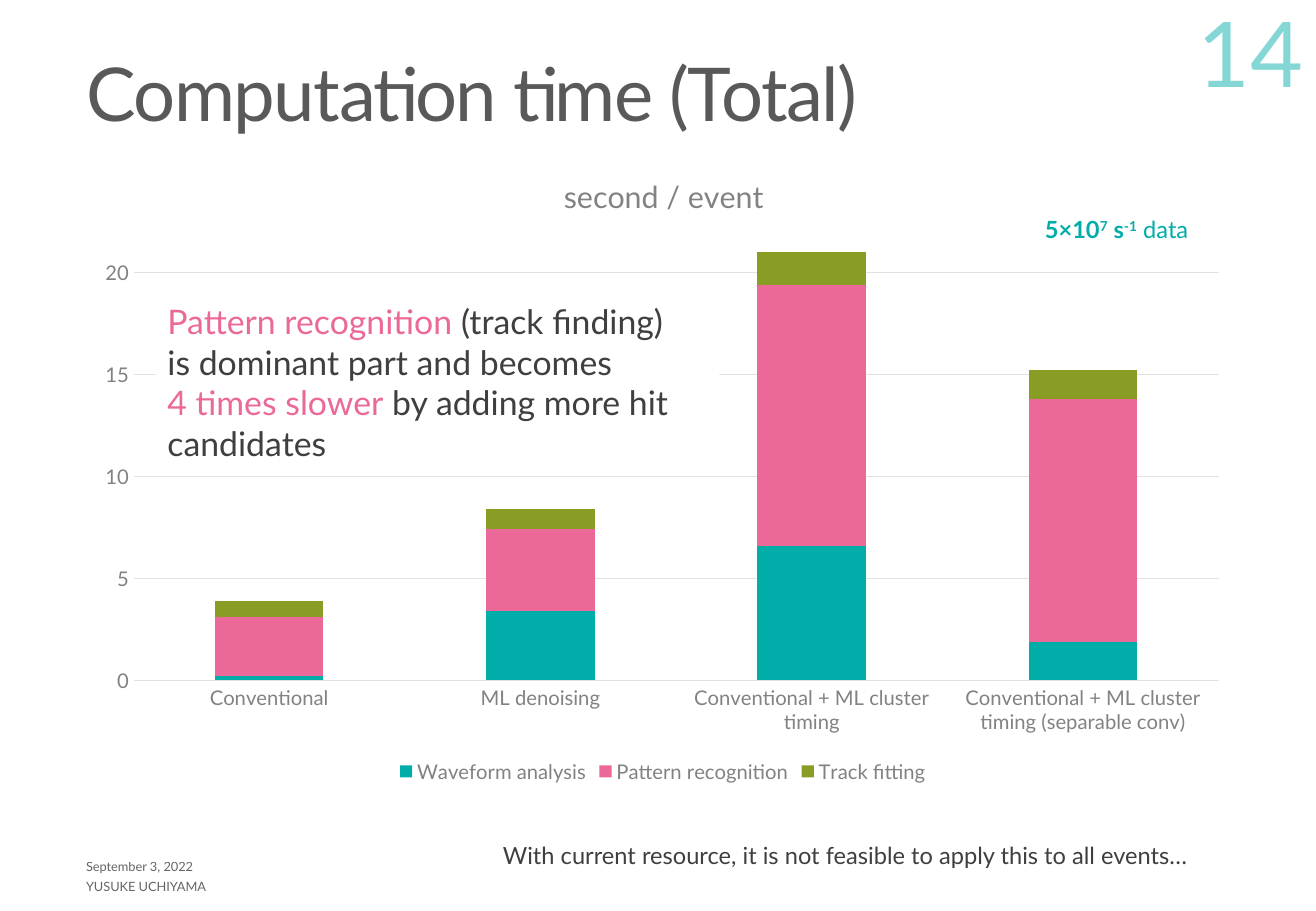
import pptx
import pptx.util
import pptx.chart.data
import pptx.dml.color
import pptx.enum.chart
import pptx.enum.shapes
import pptx.enum.text
import pptx.oxml
import pptx.oxml.ns

PX = 9144  # one px is a hundredth of an inch
FONT = "Lato"
HUES = {"title": "595959", "text": "3F3F3F", "axis": "828282", "grid": "E2E2E2",
        "teal": "00ADA9", "pink": "EB6999", "olive": "899D25", "white": "FFFFFF"}

# Content
TITLE = "Computation time (Total)"
HEAD = "second / event"
CATS = ["Conventional", "ML denoising", "Conventional + ML cluster timing",
        "Conventional + ML cluster timing (separable conv)"]
SERIES = [("Waveform analysis", "teal", [0.2, 3.4, 6.6, 1.9]),
          ("Pattern recognition", "pink", [2.9, 4, 12.8, 11.9]),
          ("Track fitting", "olive", [0.8, 1, 1.6, 1.4])]
# Runs: text, colour, bold, superscript; "\n" is a line break
RATE = [("5×10", "teal", True, False), ("7", "teal", True, True),
        (" s", "teal", True, False), ("-1", "teal", True, True),
        (" data", "teal", False, False)]
NOTE = [("Pattern recognition ", "pink"), ("(track finding)", "text"), "\n",
        ("is dominant part and becomes ", "text"), "\n",
        ("4 times slower", "pink"), (" by adding more hit candidates", "text")]
CLOSE = [("With current resource, it is not feasible to apply this to all events…", "text")]
# Small print: text, box, size, colour, opacity in percent, anchor, alignment
MARKS = [("September 3, 2022", (61, 701, 366, 25), 7.6, "text", 80, "MIDDLE", "LEFT"),
         ("YUSUKE UCHIYAMA", (61, 717, 447, 25), 7.6, "text", 80, "MIDDLE", "LEFT"),
         ("14", (963, 2, 119, 90), 54, "teal", 47, "BOTTOM", "RIGHT")]

ALIGN = pptx.enum.text.PP_ALIGN
ANCHOR = pptx.enum.text.MSO_ANCHOR


def rgb(hue):
    return pptx.dml.color.RGBColor.from_string(HUES[hue])


def emu(box):
    return [n * PX for n in box]


def style(font, size, hue, bold=False):
    font.name = FONT
    font.size = pptx.util.Pt(size)
    font.bold = bold
    font.color.rgb = rgb(hue)


def fill_runs(para, runs, size):
    for item in runs:
        if item == "\n":
            para.add_line_break()
            continue
        text, hue, bold, high = (*item, False, False)[:4]
        run = para.add_run()
        run.text = text
        style(run.font, size, hue, bold)
        if high:
            run.font._element.set("baseline", "30000")


def add_text(box, runs, size, wrap=False):
    frame = slide.shapes.add_textbox(*emu(box)).text_frame
    frame.word_wrap = wrap
    fill_runs(frame.paragraphs[0], runs, size)
    return frame


def layout(x, y, w=None, h=None):
    ns = pptx.oxml.ns.nsdecls("c")
    inner = '<c:layoutTarget val="inner"/>' if w else ""
    sizes = f'<c:w val="{w}"/><c:h val="{h}"/>' if w else ""
    return pptx.oxml.parse_xml(
        f'<c:layout {ns}><c:manualLayout>{inner}<c:xMode val="edge"/>'
        f'<c:yMode val="edge"/><c:x val="{x}"/><c:y val="{y}"/>{sizes}'
        '</c:manualLayout></c:layout>')


deck = pptx.Presentation()
deck.slide_width, deck.slide_height = emu((1083, 750))
slide = deck.slides.add_slide(deck.slide_layouts[5])

# Title
title = slide.shapes.title
title.left, title.top, title.width, title.height = emu((61, 36, 957, 90))
title.text_frame.text = TITLE
title.text_frame.vertical_anchor = ANCHOR.MIDDLE
para = title.text_frame.paragraphs[0]
para.alignment = ALIGN.LEFT
para.line_spacing = 0.85
style(para.runs[0].font, 44, "title")
para.runs[0].font._element.set("spc", "-90")

# Date, author and page number
for text, box, size, hue, alpha, anchor, align in MARKS:
    frame = add_text(box, [(text, hue)], size, True)
    frame.vertical_anchor = ANCHOR[anchor]
    para = frame.paragraphs[0]
    para.alignment = ALIGN[align]
    tint = para.runs[0].font._element.find(".//" + pptx.oxml.ns.qn("a:srgbClr"))
    tint.append(pptx.oxml.parse_xml(
        f'<a:alpha {pptx.oxml.ns.nsdecls("a")} val="{alpha * 1000}"/>'))

# Stacked columns
data = pptx.chart.data.CategoryChartData()
data.categories = CATS
for name, hue, vals in SERIES:
    data.add_series(name, vals)
chart = slide.shapes.add_chart(pptx.enum.chart.XL_CHART_TYPE.COLUMN_STACKED,
                               *emu((68, 118, 955, 531)), data).chart
style(chart.font, 10, "text")
plot = chart.plots[0]
plot.gap_width, plot.overlap, plot.vary_by_categories = 150, 100, False
for bars, (name, hue, vals) in zip(plot.series, SERIES):
    bars.format.fill.solid()
    bars.format.fill.fore_color.rgb = rgb(hue)

# Chart heading and plot area
chart.has_title = True
head = chart.chart_title
head.include_in_layout = False
head.text_frame.text = HEAD
style(head.text_frame.paragraphs[0].runs[0].font, 18, "axis")
qn = pptx.oxml.ns.qn
for part, place in ((head._element, layout(0.41, 0.04)),
                    (chart._chartSpace.chart.plotArea, layout(0.044, 0.137, 0.935, 0.696))):
    old = part.find(qn("c:layout"))
    if old is not None:
        part.remove(old)
    tx = part.find(qn("c:tx"))
    part.insert(0 if tx is None else 1, place)

# Axes and legend
cat, val = chart.category_axis, chart.value_axis
for axis in (cat, val):
    style(axis.tick_labels.font, 12, "axis")
    axis.major_tick_mark = axis.minor_tick_mark = pptx.enum.chart.XL_TICK_MARK.NONE
val.minimum_scale, val.maximum_scale, val.major_unit = 0, 22, 5
val.format.line.fill.background()
for line in (cat.format.line, val.major_gridlines.format.line):
    line.color.rgb = rgb("grid")
    line.width = pptx.util.Pt(0.75)
chart.has_legend = True
chart.legend.position = pptx.enum.chart.XL_LEGEND_POSITION.BOTTOM
chart.legend.include_in_layout = False
style(chart.legend.font, 12, "axis")

# Data rate
add_text((850, 172, 145, 34), RATE, 14)

# Note over the chart
note = slide.shapes.add_shape(pptx.enum.shapes.MSO_SHAPE.RECTANGLE,
                              *emu((128, 243, 464, 145)))
note.shadow.inherit = False
note.fill.solid()
note.fill.fore_color.rgb = rgb("white")
note.line.fill.background()
note.text_frame.word_wrap = True
note.text_frame.vertical_anchor = ANCHOR.TOP
para = note.text_frame.paragraphs[0]
para.alignment = ALIGN.LEFT
fill_runs(para, NOTE, 20)

# Closing remark
add_text((404, 687, 614, 34), CLOSE, 14)

deck.save("out.pptx")
